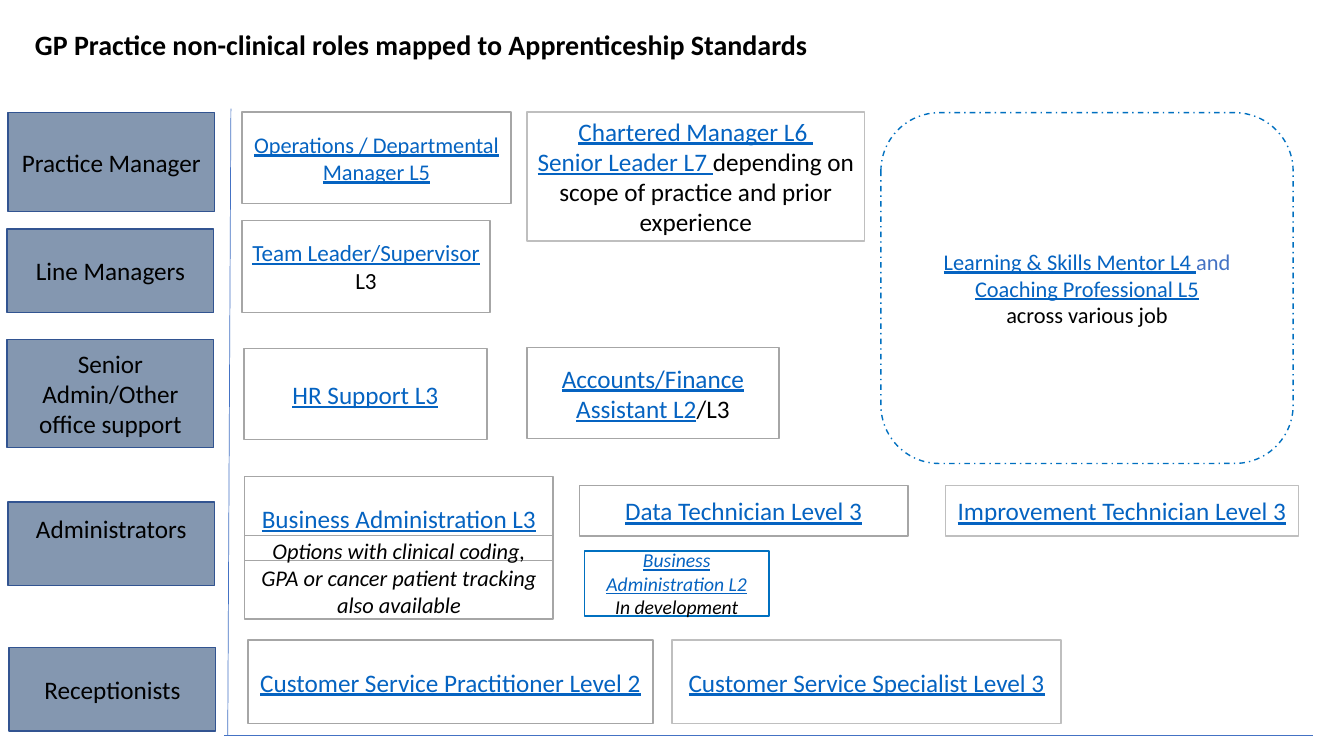
from lxml import etree
from pptx import Presentation
from pptx import util as u
from pptx.dml.color import RGBColor
from pptx.enum import dml, shapes, text
from pptx.oxml import ns

HUES = {
    "ink": "000000", "link": "0563C1", "axis": "4472C4", "role": "8497B0",
    "edge": "325491", "grey": "A6A6A6", "pale": "BFBFBF", "blue": "0070C0",
}


def hue(name):
    return RGBColor.from_string(HUES[name])


def write(shape, paras, size=18, bold=False, slant=False):
    """Fill a shape with paragraphs, each a list of (words, colour) runs."""
    frame = shape.text_frame
    frame.word_wrap = True
    frame.vertical_anchor = text.MSO_ANCHOR.MIDDLE
    for i, runs in enumerate(paras):
        para = frame.paragraphs[0] if i == 0 else frame.add_paragraph()
        para.alignment = text.PP_ALIGN.CENTER
        for words, tint in runs:
            run = para.add_run()
            run.text = words
            font = run.font
            font.name, font.size = "Calibri", u.Pt(size)
            font.bold, font.italic = bold, slant
            font.underline = tint == "link"
            font.color.rgb = hue(tint)


def block(slide, x, y, w, h, edge="grey", fill=None, kind="RECTANGLE"):
    shape = slide.shapes.add_shape(
        shapes.MSO_SHAPE[kind], u.Cm(x), u.Cm(y), u.Cm(w), u.Cm(h))
    shape.shadow.inherit = False
    if fill:
        shape.fill.solid()
        shape.fill.fore_color.rgb = hue(fill)
    else:
        shape.fill.background()
    shape.line.color.rgb = hue(edge)
    shape.line.width = u.Pt(1)
    return shape


def heading(slide, x, y, w, h):
    title = slide.shapes.title
    title.left, title.top, title.width, title.height = map(u.Cm, (x, y, w, h))
    write(title, [[("GP Practice non-clinical roles mapped to "
                    "Apprenticeship Standards", "ink")]], size=20, bold=True)


def axes(slide, x, y, w, h):
    ends = [(x + 0.18, y, x + 0.1, y + h), (x, y + h, x + w, y + h)]
    for pos in ends:
        line = slide.shapes.add_connector(
            shapes.MSO_CONNECTOR.STRAIGHT, *map(u.Cm, pos))
        line.line.color.rgb = hue("axis")
        line.line.width = u.Pt(0.5)
        etree.SubElement(line._element.spPr, ns.qn("a:effectLst"))


def roles(slide, x, y, w):
    # name, offset right, offset down, height, bottom inset
    rows = [
        ("Practice Manager", 0.02, 0, 2.49, 0.13),
        ("Line Managers", 0, 2.93, 2.11, 0.13),
        ("Senior Admin/Other office support", 0, 5.72, 2.72, 0.13),
        ("Administrators", 0.02, 9.81, 2.11, 0.9),
        ("Receptionists", 0.05, 13.47, 2.11, 0.13),
    ]
    for name, dx, dy, h, inset in rows:
        role = block(slide, x + dx, y + dy, w, h, "edge", "role")
        role.text_frame.margin_bottom = u.Cm(inset)
        write(role, [[(name, "ink")]])


def courses(slide, x, y):
    # offset and size, edge, text size, italic, paragraphs
    cards = [
        # Practice and line managers
        ((0, 0, 6.78, 2.31), "grey", 16, False,
         [[("Operations / Departmental Manager L5", "link")]]),
        ((7.18, 0, 8.51, 3.25), "pale", 18, False,
         [[("Chartered Manager L6 ", "link")],
          [("Senior Leader L7 ", "link"),
           ("depending on scope of practice and prior experience", "ink")]]),
        ((0, 2.74, 6.25, 2.31), "grey", 16.5, False,
         [[("Team Leader/Supervisor", "link"), (" L3", "ink")]]),
        # Office support
        ((0.05, 5.97, 6.12, 2.29), "grey", 18, False,
         [[("HR Support L3", "link")]]),
        ((7.18, 5.94, 6.35, 2.29), "grey", 18, False,
         [[("Accounts/Finance Assistant L2", "link"), ("/L3", "ink")]]),
        # Administrators
        ((0.07, 9.19, 7.77, 2.11), "grey", 18, False,
         [[("Business Administration L3", "link")]]),
        ((0.07, 10.67, 7.77, 2.11), "grey", 16, True,
         [[("Options with clinical coding, GPA or cancer patient tracking "
            "also available", "ink")]]),
        ((8.5, 9.42, 8.28, 1.27), "grey", 18, False,
         [[("Data Technician Level 3", "link")]]),
        ((17.73, 9.42, 8.89, 1.27), "pale", 18, False,
         [[("Improvement Technician Level 3", "link")]]),
        ((8.63, 11.07, 4.65, 1.63), "blue", 14, True,
         [[("Business Administration L2", "link")],
          [("In development", "ink")]]),
        # Receptionists
        ((0.15, 13.31, 10.21, 2.11), "grey", 18, False,
         [[("Customer Service Practitioner Level 2", "link")]]),
        ((10.84, 13.31, 9.8, 2.11), "pale", 18, False,
         [[("Customer Service Specialist Level 3", "link")]]),
    ]
    for (dx, dy, w, h), edge, size, slant, paras in cards:
        card = block(slide, x + dx, y + dy, w, h, edge)
        write(card, paras, size=size, slant=slant)


def mentor(slide, x, y, w, h):
    panel = block(slide, x, y, w, h, "blue", kind="ROUNDED_RECTANGLE")
    panel.line.dash_style = dml.MSO_LINE.DASH_DOT
    write(panel, [
        [("Learning & Skills Mentor L4 ", "link"), ("and ", "axis"),
         ("Coaching Professional L5", "link")],
        [("across various job", "ink")],
    ], size=16)


def main():
    deck = Presentation()
    deck.slide_width, deck.slide_height = u.Cm(33.87), u.Cm(19.05)
    slide = deck.slides.add_slide(deck.slide_layouts[5])
    axes(slide, 5.64, 2.74, 27.46, 15.78)
    heading(slide, -0.15, 0.56, 21.54, 1.12)
    roles(slide, 0.18, 2.84, 5.21)
    courses(slide, 6.1, 2.82)
    mentor(slide, 22.2, 2.84, 10.39, 8.84)
    deck.save("out.pptx")


if __name__ == "__main__":
    main()
